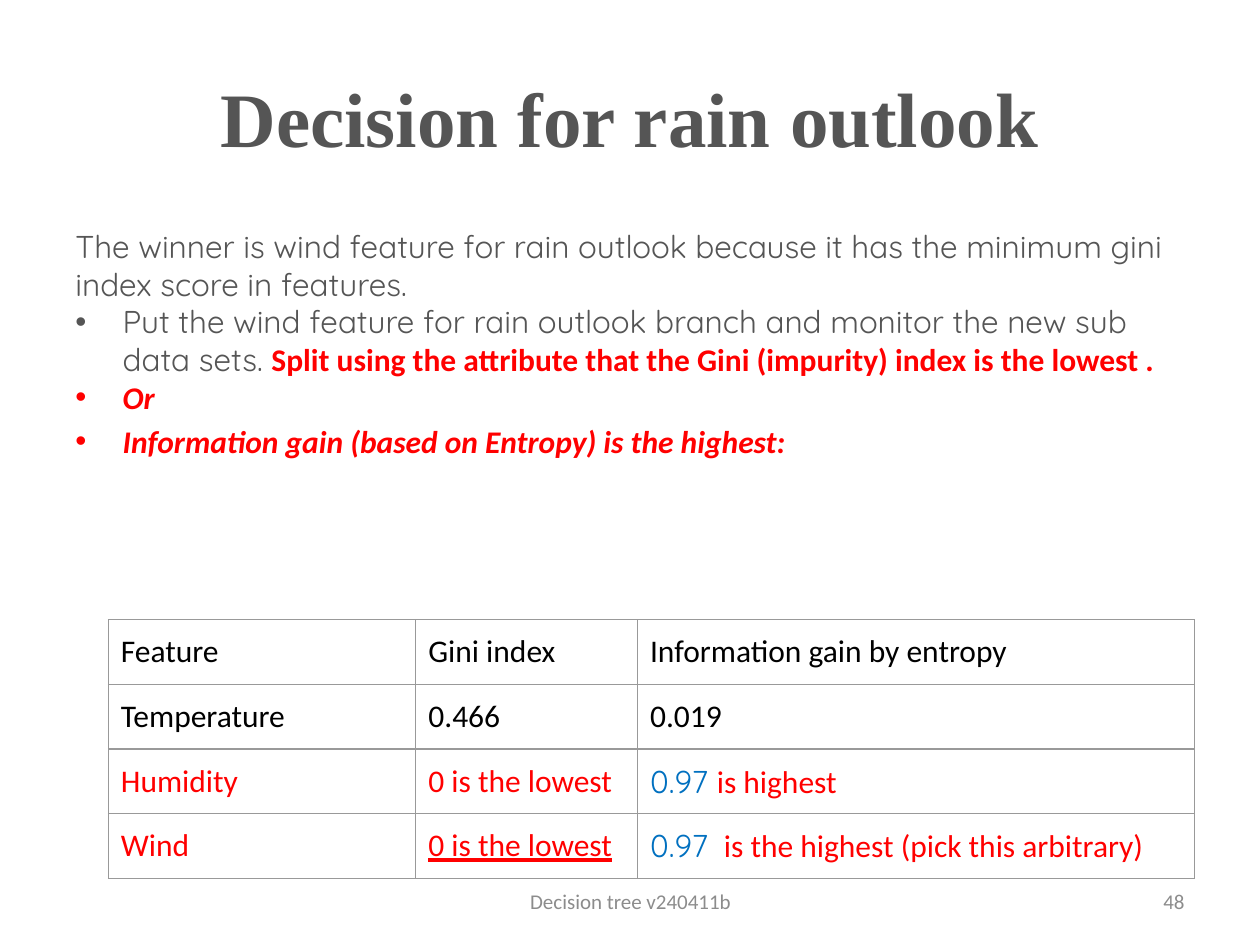
from lxml import etree
from pptx import Presentation
from pptx import util as u
from pptx.dml.color import RGBColor
from pptx.enum import text
from pptx.oxml.ns import qn

# The slide is a grid of 100 columns by 75 rows of square cells.
COLS, ROWS = 100, 75
CELL = u.Inches(10) // COLS
GREY, RED, BLUE, BLACK, PALE = "555555", "FF0000", "0070C0", "000000", "8C8C8C"
SERIF, SANS, ROUND = "Times New Roman", "Calibri", "Quicksand"
ALIGN, ANCHOR = text.PP_ALIGN, text.MSO_ANCHOR


def grid(*cells):
    return [round(c * CELL) for c in cells]


def color(hex_code):
    return RGBColor.from_string(hex_code)


def add_text(p, words, size=18, font=SANS, fill=BLACK, bold=False, italic=False, underline=False):
    r = p.add_run()
    r.text = words
    f = r.font
    f.size, f.name, f.color.rgb = u.Pt(size), font, color(fill)
    f.bold, f.italic, f.underline = bold, italic, underline


def add_frame(s, box, anchor=ANCHOR.MIDDLE):
    tf = s.shapes.add_textbox(*grid(*box)).text_frame
    tf.word_wrap = True
    tf.vertical_anchor = anchor
    return tf


def add_line(s, box, words, align, **style):
    p = add_frame(s, box).paragraphs[0]
    p.alignment = align
    add_text(p, words, **style)


def set_bullet(p, indent):
    pPr = p._p.get_or_add_pPr()
    pPr.set("marL", str(indent))
    pPr.set("indent", str(-indent))
    etree.SubElement(pPr, qn("a:buFont"), typeface="Arial")
    etree.SubElement(pPr, qn("a:buChar"), char="•")


def add_body(s, box):
    plain = dict(font=ROUND, fill=GREY)
    strong = dict(fill=RED, bold=True)
    accent = dict(strong, italic=True)
    bullets = [
        [("Put the wind feature for rain outlook branch and monitor the new sub data sets. ", plain),
         ("Split using the attribute that the Gini (impurity) index is the lowest .", strong)],
        [("Or", accent)],
        [("Information gain (based on Entropy) is the highest:", accent)],
    ]
    tf = add_frame(s, box, ANCHOR.TOP)
    add_text(tf.paragraphs[0], "The winner is wind feature for rain outlook because it has "
             "the minimum gini index score in features.", **plain)
    for runs in bullets:
        p = tf.add_paragraph()
        set_bullet(p, grid(3.75)[0])
        for words, style in runs:
            add_text(p, words, **style)
    p.space_before = u.Pt(3.6)


def set_borders(cell, hex_code="999999", width=0.75):
    tcPr = cell._tc.get_or_add_tcPr()
    for i, side in enumerate(("lnL", "lnR", "lnT", "lnB")):
        ln = etree.Element(qn(f"a:{side}"), w=str(u.Pt(width)))
        fill = etree.SubElement(ln, qn("a:solidFill"))
        etree.SubElement(fill, qn("a:srgbClr"), val=hex_code)
        tcPr.insert(i, ln)


def add_feature_table(s, box, widths):
    red, blue = dict(fill=RED), dict(font=ROUND, fill=BLUE)
    rows = [
        [[(words, {})] for words in ("Feature", "Gini index", "Information gain by entropy")],
        [[(words, {})] for words in ("Temperature", "0.466", "0.019")],
        [[("Humidity", red)], [("0 is the lowest", red)],
         [("0.97 ", blue), ("is highest", red)]],
        [[("Wind", red)], [("0 is the lowest", dict(red, underline=True))],
         [("0.97 ", blue), (" is the highest (pick this arbitrary)", red)]],
    ]
    table = s.shapes.add_table(len(rows), len(widths), *grid(*box)).table
    table.first_row = table.horz_banding = False
    for column, width in zip(table.columns, grid(*widths)):
        column.width = width
    margin = grid(1)[0]
    for i, row in enumerate(rows):
        for j, runs in enumerate(row):
            cell = table.cell(i, j)
            cell.fill.solid()
            cell.fill.fore_color.rgb = color("FFFFFF")
            cell.vertical_anchor = ANCHOR.MIDDLE
            cell.margin_left = cell.margin_right = margin
            cell.margin_top = cell.margin_bottom = margin
            set_borders(cell)
            for words, style in runs:
                add_text(cell.text_frame.paragraphs[0], words, **style)


def main():
    prs = Presentation()
    prs.slide_width, prs.slide_height = grid(COLS, ROWS)
    s = prs.slides.add_slide(prs.slide_layouts[6])
    add_line(s, (5, 3, 90, 12.5), "Decision for rain outlook", ALIGN.CENTER,
             size=44, font=SERIF, fill=GREY, bold=True)
    add_body(s, (5, 17.5, 90, 49.5))
    small = dict(size=12, fill=PALE)
    add_line(s, (34.2, 69.5, 31.7, 4), "Decision tree v240411b", ALIGN.CENTER, **small)
    add_line(s, (71.7, 69.5, 23.3, 4), "48", ALIGN.RIGHT, **small)
    add_feature_table(s, (8.6, 49.2, 86.2, 20.5), (24.4, 17.6, 44.2))
    prs.save("out.pptx")


if __name__ == "__main__":
    main()
